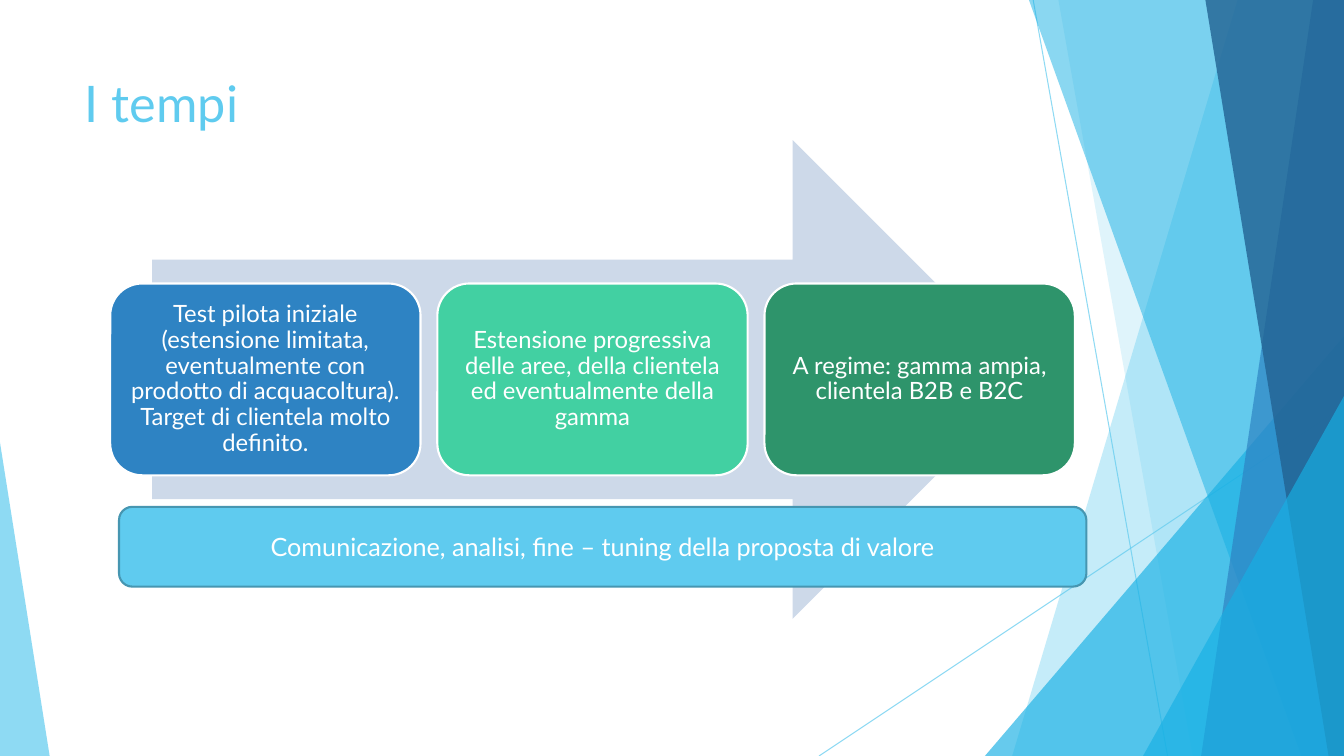
from lxml import etree
from pptx import Presentation
from pptx.dml.color import RGBColor
from pptx.enum import shapes, text
from pptx.oxml.ns import qn
from pptx.util import Pt

WIDTH, HEIGHT = 960, 540
FONT = "Lato"
WHITE = RGBColor(0xFF, 0xFF, 0xFF)
SKY = RGBColor(0x5F, 0xCB, 0xEF)
CYAN = RGBColor(0x17, 0xB0, 0xE4)
BLUE = RGBColor(0x2E, 0x83, 0xC3)
NAVY = RGBColor(0x22, 0x62, 0x92)
MINT = RGBColor(0x42, 0xD0, 0xA2)
GREEN = RGBColor(0x2E, 0x94, 0x6B)
PALE = RGBColor(0xCD, 0xD9, 0xE9)
STEEL = RGBColor(0x46, 0x96, 0xB1)

PHASES = [
    ("Test pilota iniziale (estensione limitata, eventualmente con prodotto di "
     "acquacoltura). Target di clientela molto definito.", BLUE),
    ("Estensione progressiva delle aree, della clientela ed eventualmente "
     "della gamma", MINT),
    ("A regime: gamma ampia, clientela B2B e B2C", GREEN),
]


def set_opacity(shape, percent):
    for color in shape.element.spPr.iter(qn("a:srgbClr")):
        etree.SubElement(color, qn("a:alpha"), val=str(percent * 1000))


def paint(shape, fill, line=None, opacity=100):
    shape.shadow.inherit = False
    shape.fill.solid()
    shape.fill.fore_color.rgb = fill
    if line is None:
        shape.line.fill.background()
    else:
        shape.line.color.rgb = line
        shape.line.width = Pt(1.5)
    if opacity < 100:
        set_opacity(shape, opacity)


def add_block(slide, kind, box, fill, line=None, opacity=100):
    shape = slide.shapes.add_shape(kind, *(Pt(length) for length in box))
    paint(shape, fill, line, opacity)
    return shape


def write(shape, words, size, color, alignment, anchor):
    frame = shape.text_frame
    frame.word_wrap = True
    frame.vertical_anchor = anchor
    frame.text = words
    paragraph = frame.paragraphs[0]
    paragraph.alignment = alignment
    font = paragraph.runs[0].font
    font.name, font.size, font.color.rgb = FONT, Pt(size), color
    return paragraph


def add_ray(slide, start, end):
    """Thin translucent line of the background."""
    ray = slide.shapes.add_connector(
        shapes.MSO_CONNECTOR.STRAIGHT, *(Pt(length) for length in start + end))
    ray.line.color.rgb = SKY
    ray.line.width = Pt(0.75)
    set_opacity(ray, 70)
    etree.SubElement(ray.element.spPr, qn("a:effectLst"))


def add_band(slide, top_x, bottom_x, color, opacity):
    """Full-height band between a slanted edge and the right slide edge."""
    builder = slide.shapes.build_freeform(Pt(top_x), 0)
    builder.add_line_segments(
        [(Pt(WIDTH), 0), (Pt(WIDTH), Pt(HEIGHT)), (Pt(bottom_x), Pt(HEIGHT))])
    paint(builder.convert_to_shape(), color, opacity=opacity)


def add_corner(slide, left, top, width, apex, color, opacity):
    """Triangle that stands on the bottom slide edge."""
    triangle = add_block(slide, shapes.MSO_SHAPE.ISOSCELES_TRIANGLE,
                         (left, top, width, HEIGHT - top), color, opacity=opacity)
    triangle.adjustments[0] = apex


def add_background(slide):
    add_ray(slide, (738, 0), (834, HEIGHT))
    add_ray(slide, (WIDTH, 290), (585, HEIGHT))
    add_band(slide, 884, 723, SKY, 36)
    add_band(slide, 756, 852, SKY, 20)
    add_corner(slide, 703.5, 240, 256.5, 1, CYAN, 66)
    add_band(slide, 735, 929.5, CYAN, 50)
    add_band(slide, 938, 858, BLUE, 70)
    add_band(slide, 861, 949, NAVY, 80)
    add_corner(slide, 816.5, 283, 143.5, 1, CYAN, 66)
    add_corner(slide, 0, 316, 35.5, 0, SKY, 70)


def add_title(slide, box):
    title = slide.shapes.add_textbox(*(Pt(length) for length in box))
    write(title, "I tempi", 36, SKY, text.PP_ALIGN.LEFT, text.MSO_ANCHOR.TOP)


def add_process(slide, left, top, width, height):
    """Wide arrow with a row of equal phases across its middle."""
    gap, phase_height = 12, 137
    phase_width = (width - gap * (len(PHASES) - 1)) / len(PHASES)
    add_block(slide, shapes.MSO_SHAPE.RIGHT_ARROW,
              (left + 30, top, 628.5, height), PALE)
    for index, (words, color) in enumerate(PHASES):
        box = (left + index * (phase_width + gap),
               top + (height - phase_height) / 2, phase_width, phase_height)
        phase = add_block(slide, shapes.MSO_SHAPE.ROUNDED_RECTANGLE, box, color, WHITE)
        frame = phase.text_frame
        frame.margin_left = frame.margin_right = Pt(5)
        frame.margin_top = frame.margin_bottom = Pt(5)
        paragraph = write(phase, words, 17, WHITE,
                          text.PP_ALIGN.CENTER, text.MSO_ANCHOR.MIDDLE)
        paragraph.line_spacing = 0.9


def add_support_bar(slide, box):
    bar = add_block(slide, shapes.MSO_SHAPE.ROUNDED_RECTANGLE, box, SKY, STEEL)
    write(bar, "Comunicazione, analisi, fine – tuning della proposta di valore",
          18, WHITE, text.PP_ALIGN.CENTER, text.MSO_ANCHOR.MIDDLE)


def main():
    presentation = Presentation()
    presentation.slide_width, presentation.slide_height = Pt(WIDTH), Pt(HEIGHT)
    slide = presentation.slides.add_slide(presentation.slide_layouts[6])
    add_background(slide)
    add_title(slide, (53.5, 48, 677, 104))
    add_process(slide, 78.75, 100, 689, 342)
    add_support_bar(slide, (85, 362, 691, 57))
    presentation.save("out.pptx")


if __name__ == "__main__":
    main()
